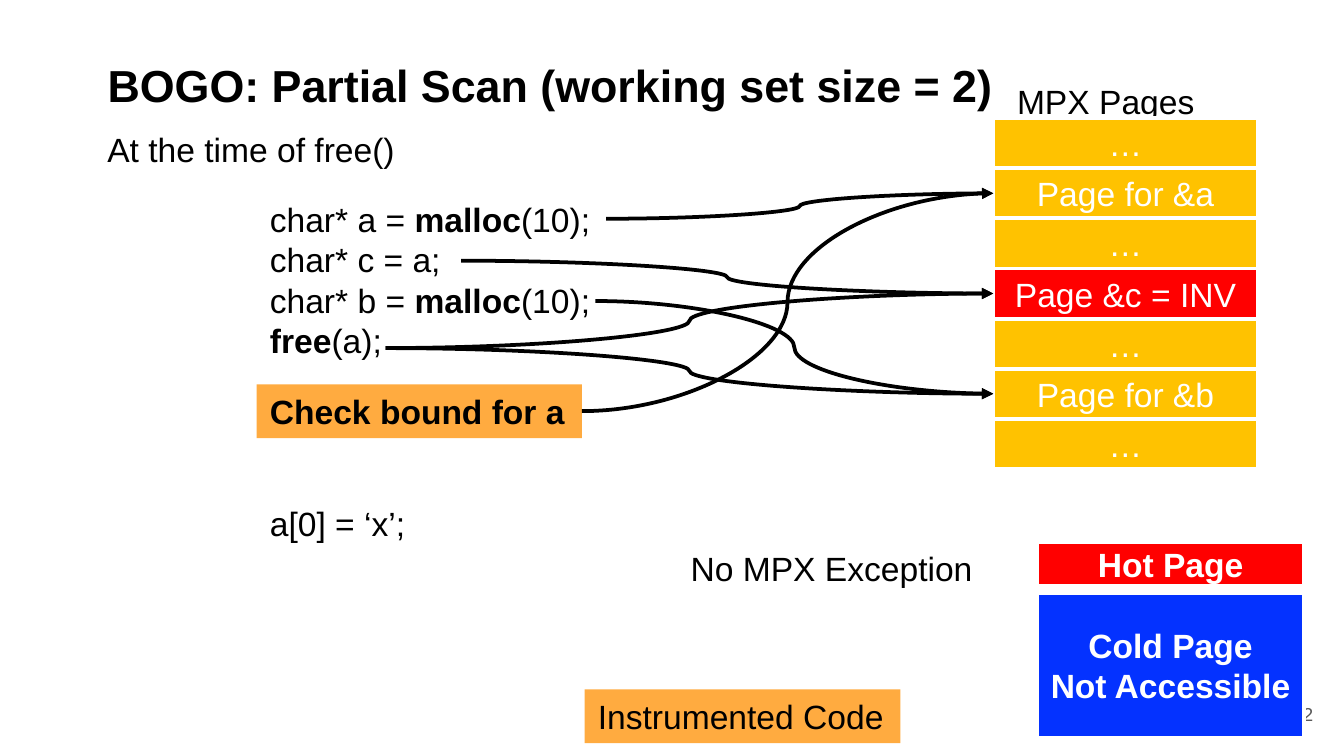
"""Build the slide on partial scan with MPX pages."""
from dataclasses import dataclass
from typing import Optional

from lxml.etree import SubElement as Sub
from pptx import Presentation
from pptx.dml.color import RGBColor as Rgb
from pptx.enum.shapes import MSO_CONNECTOR as Link, MSO_SHAPE as Form
from pptx.enum.text import MSO_ANCHOR as Anchor, MSO_AUTO_SIZE as Fit, PP_ALIGN as Align
from pptx.oxml.ns import qn
from pptx.util import Pt

INK = {
    "black": "000000", "white": "FFFFFF", "grey": "595959", "gold": "FFC200",
    "red": "FF0000", "blue": "0432FF", "orange": "FFAB40",
}
FONT = "Arial"


@dataclass
class Label:
    """Text at a place; a bar in the text toggles bold."""
    text: str
    left: float
    top: float
    width: float
    height: float = 28.8
    fill: Optional[str] = None


@dataclass
class Block(Label):
    """Filled box with centred white text."""


@dataclass
class Arrow:
    """Curve from a point to the left side of a page."""
    left: float
    top: float
    page: int


LABELS = [
    Label("char* a = |malloc|(10);\nchar* c = a;\nchar* b = |malloc|(10);\n|free|(a);",
          137.5, 103, 188, 94.3),
    Label("a[0] = ‘x’;", 137.5, 265.7, 87.8),
    Label("Instrumented Code", 313.2, 369.4, 169.2, fill="orange"),
    Label("MPX Pages", 537.8, 39.6, 110.2),
    Label("At the time of free()", 50.4, 65.5, 170),
    Label("No MPX Exception", 362.9, 290.2, 167),
]
CHECK = Label("|Check bound for a", 137.5, 205.9, 174.2, fill="orange")
KEYS = [
    Block("|Hot Page", 555.8, 290.2, 142.6, 23.8, "red"),
    Block("|Cold Page\n|Not Accessible", 555.8, 317.5, 142.6, 77.8, "blue"),
]
PAGES = ["…", "Page for &a", "…", "Page &c = INV", "…", "Page for &b", "…"]
LEFT, TOP, WIDTH, PITCH = 532.1, 63.3, 141.8, 26.85
ARROWS = [
    Arrow(324.7, 117.2, 1), Arrow(247, 139.7, 3), Arrow(319, 161.3, 5),
    Arrow(206.6, 186.5, 3), Arrow(206.6, 186.5, 5),
]


def paint(frame, text: str, ink: str, size: float = 18, align=Align.LEFT) -> None:
    """Write text and format its runs."""
    frame.text = text
    for para in frame.paragraphs:
        para.alignment = align
        parts = para.text.split("|")
        para.text = parts[0]
        for part in parts[1:]:
            para.add_run().text = part
        bold = len(parts) > 1 and not parts[0]
        heavy = [i % 2 == 1 for i, part in enumerate(parts) if part or not bold]
        for run, thick in zip(para.runs, heavy):
            font = run.font
            font.name, font.size, font.bold = FONT, Pt(size), thick
            font.color.rgb = Rgb.from_string(INK[ink])


def place(shape, left: float, top: float, width: float, height: float) -> None:
    """Set the bounds of a shape."""
    shape.left, shape.top = Pt(left), Pt(top)
    shape.width, shape.height = Pt(width), Pt(height)


def draw_label(slide, item: Label):
    """Draw an unwrapped label, filled or plain."""
    box = (Pt(item.left), Pt(item.top), Pt(item.width), Pt(item.height))
    if item.fill:
        shape = slide.shapes.add_shape(Form.RECTANGLE, *box)
        shape.shadow.inherit = False
        shape.fill.solid()
        shape.fill.fore_color.rgb = Rgb.from_string(INK[item.fill])
        shape.line.fill.background()
    else:
        shape = slide.shapes.add_textbox(*box)
    frame = shape.text_frame
    paint(frame, item.text, "black")
    frame.vertical_anchor = Anchor.TOP
    frame.word_wrap, frame.auto_size = False, Fit.SHAPE_TO_FIT_TEXT
    return shape


def draw_block(slide, item: Block):
    """Draw a box with a white edge and centred text."""
    shape = draw_label(slide, item)
    shape.line.color.rgb = Rgb.from_string(INK["white"])
    shape.line.width = Pt(2)
    frame = shape.text_frame
    frame.word_wrap, frame.auto_size = True, Fit.NONE
    frame.vertical_anchor = Anchor.MIDDLE
    paint(frame, item.text, "white", align=Align.CENTER)
    return shape


def draw_arrow(slide, left: float, top: float, page):
    """Draw a curved arrow that joins the left side of a page."""
    curve = slide.shapes.add_connector(
        Link.CURVE, Pt(left), Pt(top), page.left, page.top + page.height // 2)
    curve.end_connect(page, 1)
    curve.line.width = Pt(2)
    curve.line.color.rgb = Rgb.from_string(INK["black"])
    Sub(curve.line._get_or_add_ln(), qn("a:tailEnd"), type="triangle")
    Sub(curve._element.spPr, qn("a:effectLst"))
    return curve


def main() -> None:
    """Build and save the slide."""
    deck = Presentation()
    deck.slide_width, deck.slide_height = Pt(720), Pt(405)
    slide = deck.slides.add_slide(deck.slide_layouts[5])

    title = slide.shapes.title
    place(title, 50.4, 23.8, 553, 33.8)
    frame = title.text_frame
    frame.word_wrap, frame.auto_size = True, Fit.NONE
    frame.vertical_anchor = Anchor.TOP
    frame.margin_top = frame.margin_bottom = Pt(7.2)
    paint(frame, "|BOGO: Partial Scan (working set size = 2)", "black", 24)

    count = slide.shapes.add_textbox(Pt(667.4), Pt(367.2), Pt(43.2), Pt(31))
    count.text_frame.word_wrap = True
    count.text_frame.vertical_anchor = Anchor.MIDDLE
    paint(count.text_frame, "12", "grey", 10, Align.RIGHT)

    for item in LABELS:
        draw_label(slide, item)
    check = draw_label(slide, CHECK)
    for item in KEYS:
        draw_block(slide, item)
    pages = [
        draw_block(slide, Block(text, LEFT, TOP + i * PITCH, WIDTH, PITCH,
                                "red" if "INV" in text else "gold"))
        for i, text in enumerate(PAGES)
    ]
    for item in ARROWS:
        draw_arrow(slide, item.left, item.top, pages[item.page])
    right, mid = CHECK.left + CHECK.width, CHECK.top + CHECK.height / 2
    draw_arrow(slide, right, mid, pages[1]).begin_connect(check, 3)
    deck.save("out.pptx")


if __name__ == "__main__":
    main()
